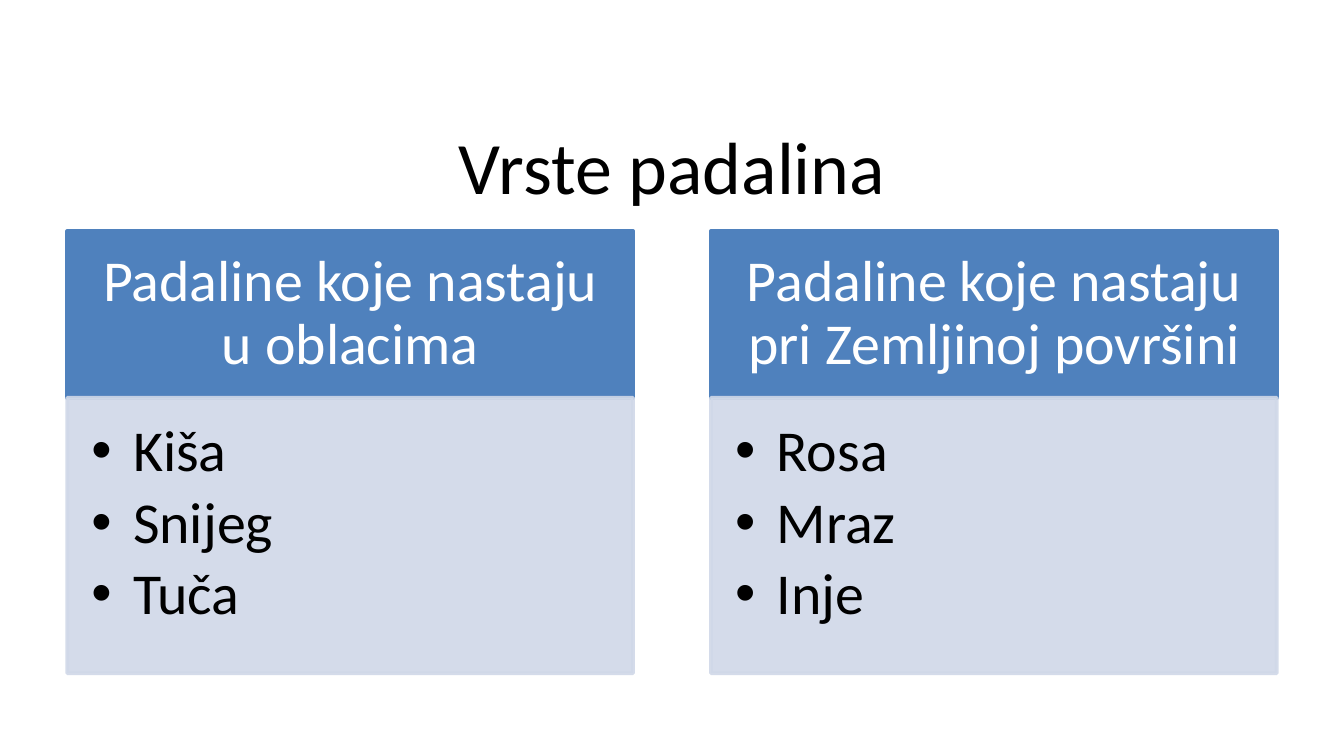
import dataclasses
import typing

import lxml.etree
import pptx
import pptx.dml.color
import pptx.enum.text
import pptx.oxml.ns
import pptx.util

Inches = pptx.util.Inches
Pt = pptx.util.Pt
Align = pptx.enum.text.PP_ALIGN
Anchor = pptx.enum.text.MSO_ANCHOR


@dataclasses.dataclass(frozen=True)
class Theme:
    font: str = "Calibri"
    ink: str = "000000"
    heading_ink: str = "FFFFFF"
    heading_fill: str = "4F81BD"
    list_fill: str = "D0D8E8"
    list_opacity: int = 90
    title_size: float = 39.6
    text_size: float = 31
    border: float = 2


@dataclasses.dataclass(frozen=True)
class Grid:
    """Two equal columns between side margins; lengths in inches."""
    width: float = 10
    height: float = 10 * 9 / 16
    margin: float = 0.5
    gutter: float = 0.58
    title_top: float = 0.84
    title_height: float = 0.78
    heading_top: float = 1.72
    heading_height: float = 1.24
    list_height: float = 2.05

    @property
    def column_width(self) -> float:
        return (self.width - 2 * self.margin - self.gutter) / 2

    def column_left(self, column: int) -> float:
        return self.margin + column * (self.column_width + self.gutter)


class Category(typing.NamedTuple):
    heading: str
    kinds: tuple[str, ...]


THEME = Theme()
GRID = Grid()
CATEGORIES = (
    Category("Padaline koje nastaju u oblacima", ("Kiša", "Snijeg", "Tuča")),
    Category("Padaline koje nastaju pri Zemljinoj površini", ("Rosa", "Mraz", "Inje")),
)


def place(holder, left: float, top: float, width: float, height: float) -> None:
    holder.left, holder.top = Inches(left), Inches(top)
    holder.width, holder.height = Inches(width), Inches(height)


def set_frame(holder, anchor, insets: tuple[float, float, float, float]) -> None:
    frame = holder.text_frame
    frame.word_wrap = True
    frame.auto_size = pptx.enum.text.MSO_AUTO_SIZE.NONE
    frame.vertical_anchor = anchor
    (frame.margin_left, frame.margin_top,
     frame.margin_right, frame.margin_bottom) = map(Inches, insets)


def paint(holder, color: str, opacity: int = 100) -> None:
    """Give fill and border one colour, with optional transparency."""
    rgb = pptx.dml.color.RGBColor.from_string(color)
    holder.fill.solid()
    holder.fill.fore_color.rgb = rgb
    holder.line.color.rgb = rgb
    holder.line.width = Pt(THEME.border)
    if opacity < 100:
        qn = pptx.oxml.ns.qn
        for tint in holder.element.spPr.iter(qn("a:srgbClr")):
            lxml.etree.SubElement(tint, qn("a:alpha"), val=str(opacity * 1000))


def style(paragraph, size: float, color: str, align, spacing: float = 1, after: float = 0) -> None:
    paragraph.alignment = align
    paragraph.line_spacing = spacing
    paragraph.space_before = Pt(0)
    paragraph.space_after = Pt(after)
    font = paragraph.font
    font.name, font.size, font.bold = THEME.font, Pt(size), False
    font.color.rgb = pptx.dml.color.RGBColor.from_string(color)


def add_bullet(paragraph, indent: float) -> None:
    qn = pptx.oxml.ns.qn
    properties = paragraph._p.get_or_add_pPr()
    properties.set("marL", str(Inches(indent)))
    properties.set("indent", str(-Inches(indent)))
    lxml.etree.SubElement(properties, qn("a:buFont"), typeface="Arial")
    lxml.etree.SubElement(properties, qn("a:buChar"), char="•")


def draw_title(title, text: str) -> None:
    place(title, GRID.margin, GRID.title_top, GRID.width - 2 * GRID.margin, GRID.title_height)
    set_frame(title, Anchor.MIDDLE, (0.1, 0.05, 0.1, 0.05))
    title.text_frame.text = text
    style(title.text_frame.paragraphs[0], THEME.title_size, THEME.ink, Align.CENTER)


def draw_category(heading, kinds, category: Category, column: int) -> None:
    left = GRID.column_left(column)

    # Heading band
    place(heading, left, GRID.heading_top, GRID.column_width, GRID.heading_height)
    paint(heading, THEME.heading_fill)
    set_frame(heading, Anchor.MIDDLE, (0.24, 0.14, 0.24, 0.14))
    heading.text_frame.text = category.heading
    style(heading.text_frame.paragraphs[0], THEME.text_size, THEME.heading_ink,
          Align.CENTER, spacing=0.9)

    # Bulleted list below it
    place(kinds, left, GRID.heading_top + GRID.heading_height,
          GRID.column_width, GRID.list_height)
    paint(kinds, THEME.list_fill, THEME.list_opacity)
    set_frame(kinds, Anchor.TOP, (0.18, 0.18, 0.24, 0.27))
    kinds.text_frame.text = "\n".join(category.kinds)
    for kind in kinds.text_frame.paragraphs:
        kind.level = 1
        add_bullet(kind, 0.31)
        style(kind, THEME.text_size, THEME.ink, Align.LEFT,
              spacing=0.9, after=0.15 * THEME.text_size)


def main() -> None:
    deck = pptx.Presentation()
    deck.slide_width, deck.slide_height = Inches(GRID.width), Inches(GRID.height)
    comparison = deck.slide_layouts.get_by_name("Comparison")
    slide = deck.slides.add_slide(comparison)
    title, *bodies = slide.placeholders

    draw_title(title, "Vrste padalina")
    for column, category in enumerate(CATEGORIES):
        heading, kinds = bodies[2 * column:2 * column + 2]
        draw_category(heading, kinds, category, column)

    deck.save("out.pptx")


if __name__ == "__main__":
    main()
